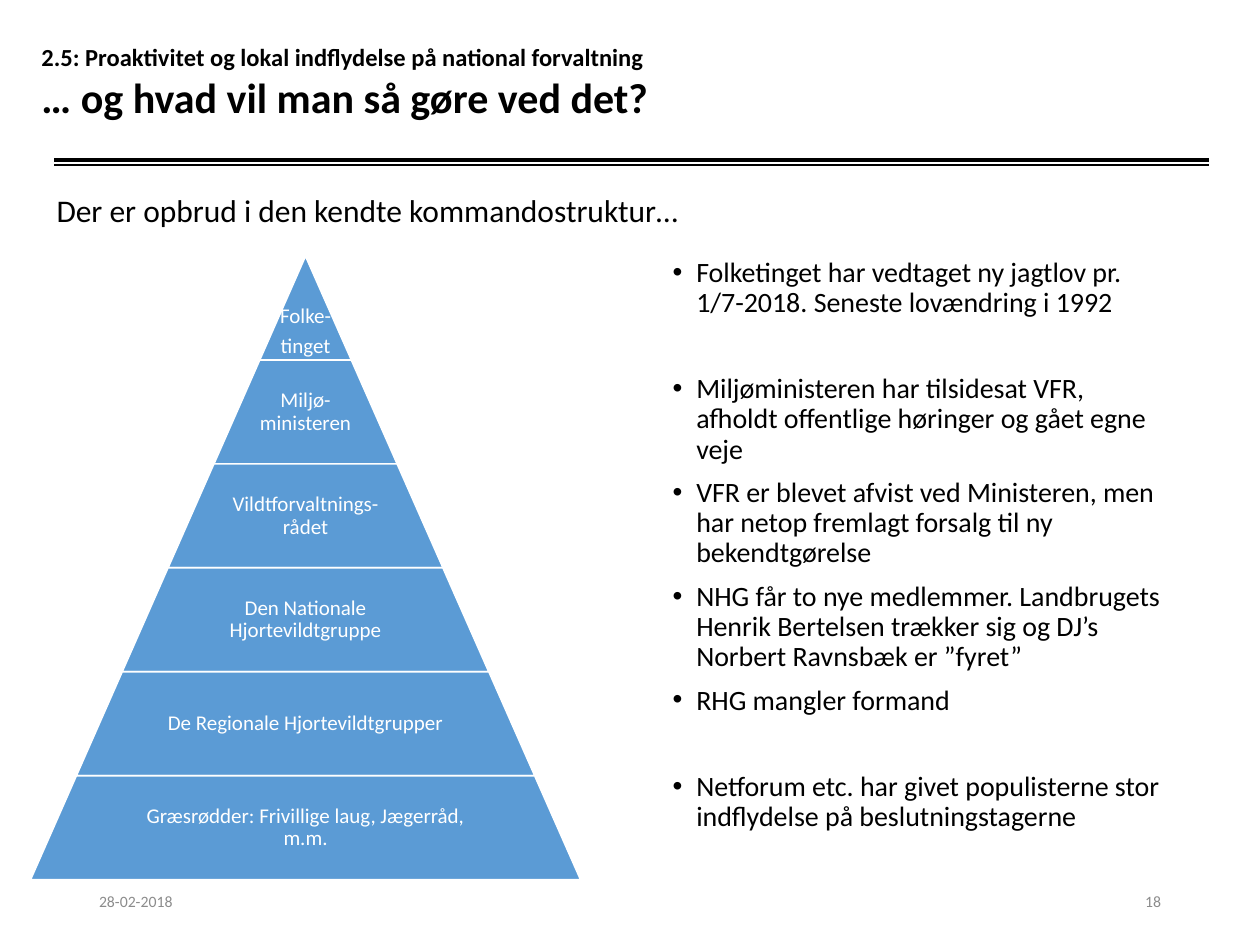
from lxml.etree import SubElement
from pptx import Presentation
from pptx.dml.color import RGBColor
from pptx.enum.shapes import MSO_CONNECTOR as Connector, MSO_SHAPE as Shape
from pptx.enum.text import MSO_ANCHOR as Anchor, PP_ALIGN as Align
from pptx.oxml.ns import qn
from pptx.util import Pt

TITLE = [("2.5: Proaktivitet og lokal indflydelse på national forvaltning", 14),
         ("… og hvad vil man så gøre ved det?", 24)]
LEAD = "Der er opbrud i den kendte kommandostruktur…"
LEVELS = [
    ["Folke-", "tinget"],
    ["Miljø-ministeren"],
    ["Vildtforvaltnings-rådet"],
    ["Den Nationale Hjortevildtgruppe"],
    ["De Regionale Hjortevildtgrupper"],
    ["Græsrødder: Frivillige laug, Jægerråd, m.m."],
]
GAP, WIDE_GAP = 7.5, 32
BULLETS = [  # text, space before
    ("Folketinget har vedtaget ny jagtlov pr. 1/7-2018. Seneste lovændring i 1992", 0),
    ("Miljøministeren har tilsidesat VFR, afholdt offentlige høringer og gået egne veje", WIDE_GAP),
    ("VFR er blevet afvist ved Ministeren, men har netop fremlagt forsalg til ny bekendtgørelse", GAP),
    ("NHG får to nye medlemmer. Landbrugets Henrik Bertelsen trækker sig og DJ’s "
     "Norbert Ravnsbæk er ”fyret”", GAP),
    ("RHG mangler formand", GAP),
    ("Netforum etc. har givet populisterne stor indflydelse på beslutningstagerne", WIDE_GAP),
]
FOOTERS = [("28-02-2018", 49.5, Align.LEFT), ("18", 508.5, Align.RIGHT)]
RULES = [(94.3, 1), (91.4, 2)]  # y, line width

BLACK, WHITE, GREY, BLUE = "000000", "FFFFFF", "8C8C8C", "5B9BD5"
APEX_X, PYRAMID_TOP = 174.6, 146.3
LEVEL_HEIGHT, WIDTH_STEP = 59.4, 52.4
LABEL_SHARE = 0.65
BULLET_INDENT = 13.5


def color(value):
    return RGBColor.from_string(value)


def set_font(font, size, fill, bold=False):
    formats = {"name": "Calibri", "size": Pt(size), "bold": bold}
    for name, value in formats.items():
        setattr(font, name, value)
    font.color.rgb = color(fill)


def add_text_box(slide, left, top, width, height, anchor=Anchor.TOP, inset=None):
    box = slide.shapes.add_textbox(Pt(left), Pt(top), Pt(width), Pt(height))
    frame = box.text_frame
    frame.word_wrap = True
    frame.vertical_anchor = anchor
    if inset is not None:
        for side in ("left", "top", "right", "bottom"):
            setattr(frame, f"margin_{side}", Pt(inset))
    return frame


def add_paragraph(frame, text, size, fill, **formats):
    """Fill the frame's empty first paragraph, or append a new one."""
    first = frame.paragraphs[0]
    paragraph = frame.add_paragraph() if first.runs else first
    for name, value in formats.items():
        setattr(paragraph, name, value)
    run = paragraph.add_run()
    run.text = text
    set_font(run.font, size, fill)
    return paragraph


def add_bullet(paragraph):
    properties = paragraph._p.get_or_add_pPr()
    properties.set("marL", str(Pt(BULLET_INDENT)))
    properties.set("indent", str(-Pt(BULLET_INDENT)))
    SubElement(properties, qn("a:buFont"), typeface="Arial")
    SubElement(properties, qn("a:buChar"), char="•")


def add_rule(slide, y, weight):
    rule = slide.shapes.add_connector(Connector.STRAIGHT, Pt(31), Pt(y), Pt(691), Pt(y))
    rule.line.color.rgb = color(BLACK)
    rule.line.width = Pt(weight)
    SubElement(rule._element.spPr, qn("a:effectLst"))


def add_title(slide):
    frame = add_text_box(slide, 16.6, 5, 648, 84.2, Anchor.MIDDLE)
    paragraph = frame.paragraphs[0]
    for index, (text, size) in enumerate(TITLE):
        if index:
            paragraph.add_line_break()
        run = paragraph.add_run()
        run.text = text
        set_font(run.font, size, BLACK, bold=True)


def add_level(slide, index, lines):
    width = WIDTH_STEP * (index + 1)
    top = PYRAMID_TOP + LEVEL_HEIGHT * index
    layer = slide.shapes.add_shape(Shape.TRAPEZOID, Pt(APEX_X - width / 2), Pt(top),
                                   Pt(width), Pt(LEVEL_HEIGHT))
    layer.adjustments[0] = WIDTH_STEP / 2 / min(width, LEVEL_HEIGHT)
    layer.shadow.inherit = False
    layer.fill.solid()
    layer.fill.fore_color.rgb = color(BLUE)
    layer.line.color.rgb = color(WHITE)
    layer.line.width = Pt(1)

    label_width = width * LABEL_SHARE if index else width
    anchor = Anchor.MIDDLE if index else Anchor.BOTTOM
    frame = add_text_box(slide, APEX_X - label_width / 2, top, label_width,
                         LEVEL_HEIGHT, anchor, inset=1.2)
    for line in lines:
        add_paragraph(frame, line, 12, WHITE, alignment=Align.CENTER,
                      line_spacing=0.9, space_after=Pt(4.2))


def main():
    presentation = Presentation()
    presentation.slide_width, presentation.slide_height = Pt(720), Pt(540)
    slide = presentation.slides.add_slide(presentation.slide_layouts[6])

    for y, weight in RULES:
        add_rule(slide, y, weight)
    add_title(slide)
    lead = add_text_box(slide, 25.2, 105.8, 639.4, 29)
    add_paragraph(lead, LEAD, 18, BLACK)

    for index, lines in enumerate(LEVELS):
        add_level(slide, index, lines)

    body = add_text_box(slide, 377.3, 144, 293.8, 356.4)
    for text, space in BULLETS:
        add_bullet(add_paragraph(body, text, 16, BLACK, line_spacing=0.9,
                                 space_before=Pt(space)))

    for text, left, alignment in FOOTERS:
        footer = add_text_box(slide, left, 500.4, 162, 28.8, Anchor.MIDDLE)
        add_paragraph(footer, text, 9, GREY, alignment=alignment)

    presentation.save("out.pptx")


if __name__ == "__main__":
    main()
